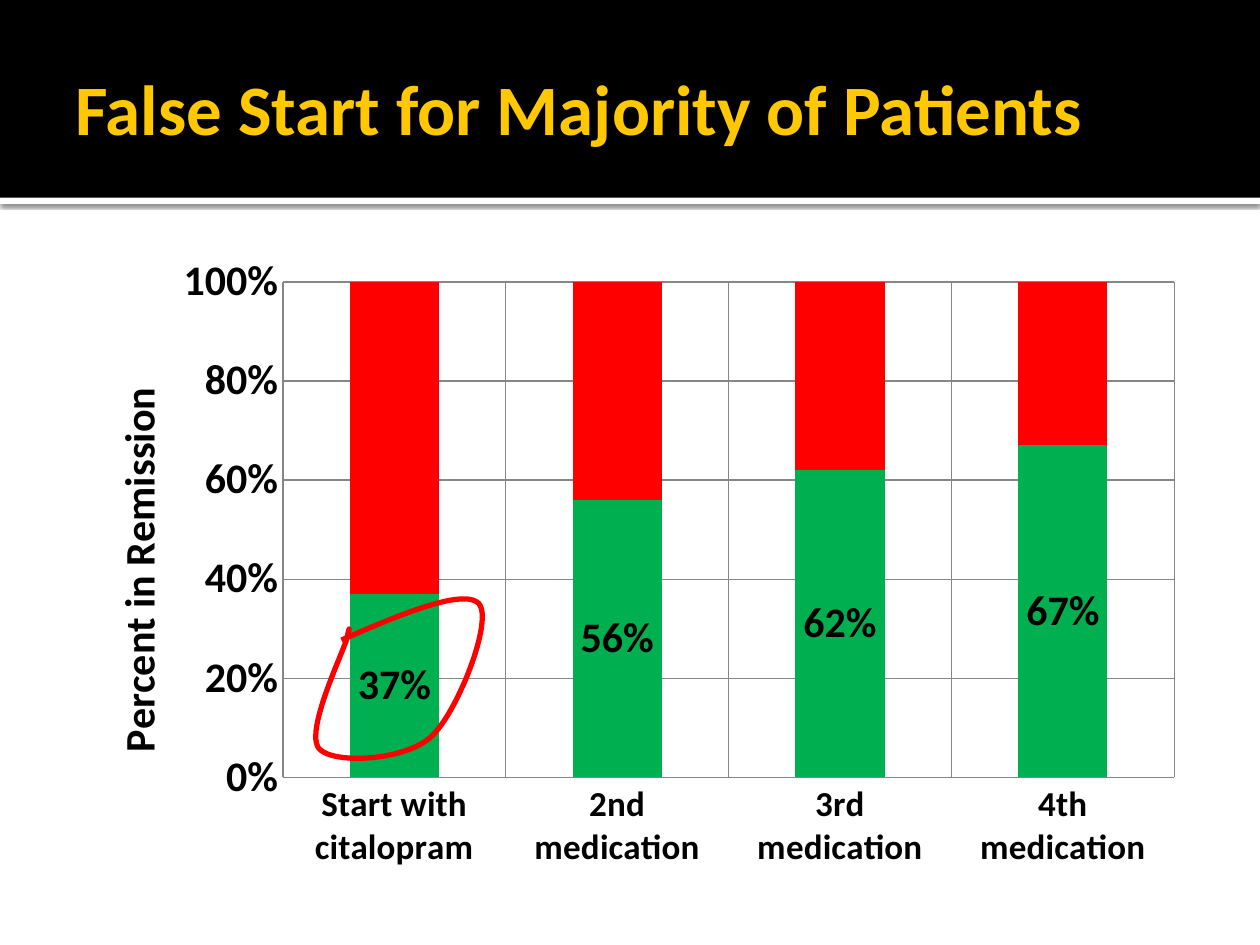
from lxml import etree
from pptx import Presentation
from pptx.chart.data import CategoryChartData
from pptx.dml.color import RGBColor
from pptx.enum.chart import XL_CHART_TYPE, XL_LABEL_POSITION, XL_TICK_MARK
from pptx.enum.shapes import MSO_SHAPE
from pptx.enum.text import MSO_ANCHOR
from pptx.oxml import parse_xml
from pptx.oxml.ns import nsdecls, qn
from pptx.util import Pt

STACKED_100 = XL_CHART_TYPE.COLUMN_STACKED_100
CENTER = XL_LABEL_POSITION.CENTER
NO_TICK = XL_TICK_MARK.NONE
RECTANGLE = MSO_SHAPE.RECTANGLE
MIDDLE = MSO_ANCHOR.MIDDLE


def color(hex_string):
    return RGBColor.from_string(hex_string)


def set_layout(element, index, **values):
    """Place a chart part by fractions of the chart's size."""
    for old_layout in element.findall(qn("c:layout")):
        element.remove(old_layout)
    layout = parse_xml(f"<c:layout {nsdecls('c')}><c:manualLayout/></c:layout>")
    for name, value in values.items():
        etree.SubElement(layout[0], qn(f"c:{name}")).set("val", str(value))
    element.insert(index, layout)


presentation = Presentation()
presentation.slide_width, presentation.slide_height = Pt(720), Pt(540)
slide = presentation.slides.add_slide(presentation.slide_layouts[6])
shapes = slide.shapes

# Header band with a white strip that casts a shadow
for top, height, fill in ((113, 3.6, "FFFFFF"), (0, 113, "000000")):
    band = shapes.add_shape(RECTANGLE, 0, Pt(top), Pt(720), Pt(height))
    band.shadow.inherit = False
    band.fill.solid()
    band.fill.fore_color.rgb = color(fill)
    band.line.fill.background()
    if fill == "FFFFFF":
        effects = band._element.spPr.find(qn("a:effectLst"))
        effects.append(parse_xml(
            f'<a:outerShdw {nsdecls("a")} blurRad="{Pt(2.5)}" dist="{Pt(0.8)}" '
            'dir="5400000" algn="tl" rotWithShape="0"><a:srgbClr val="000000">'
            '<a:alpha val="60000"/></a:srgbClr></a:outerShdw>'))

# Title
title = shapes.add_textbox(Pt(36), Pt(12.2), Pt(648), Pt(98.6))
frame = title.text_frame
frame.word_wrap = True
frame.vertical_anchor = MIDDLE
frame.margin_left = Pt(7.2)
frame.margin_right = frame.margin_top = frame.margin_bottom = Pt(3.6)
paragraph = frame.paragraphs[0]
paragraph.text = "False Start for Majority of Patients"
paragraph.font.name = "Calibri"
paragraph.font.size = Pt(40.5)
paragraph.font.bold = True
paragraph.font.color.rgb = color("FFC800")

# Remission chart
remission = [0.37, 0.56, 0.62, 0.67]
data = CategoryChartData(number_format="0%")
data.categories = ["Start with citalopram", "2nd medication",
                   "3rd medication", "4th medication"]
data.add_series("Series 1", remission)
data.add_series("Series 2", [round(1 - share, 2) for share in remission])
chart = shapes.add_chart(STACKED_100, Pt(36), Pt(139.7), Pt(648), Pt(364.3),
                         data).chart
chart.has_legend = False
chart.has_title = False
chart.font.name = "Calibri"
chart.font.size = Pt(24)
chart.font.bold = True
chart.font.color.rgb = color("000000")
set_layout(chart._chartSpace.chart.plotArea, 0, layoutTarget="inner",
           xMode="edge", yMode="edge", x=0.194, y=0.059, w=0.786, h=0.777)

# Bars and labels
plot = chart.plots[0]
plot.gap_width = 150
plot.overlap = 100
plot.vary_by_categories = False
for series, fill in zip(plot.series, ("00B050", "FF0000")):
    series.format.fill.solid()
    series.format.fill.fore_color.rgb = color(fill)
labels = plot.series[0].data_labels
labels.show_value = True
labels.number_format = "0%"
labels.number_format_is_linked = False
labels.position = CENTER

# Axes
for axis in (chart.category_axis, chart.value_axis):
    axis.major_tick_mark = axis.minor_tick_mark = NO_TICK
    axis.has_major_gridlines = True
    for line in (axis.format.line, axis.major_gridlines.format.line):
        line.color.rgb = color("868686")
        line.width = Pt(0.75)
chart.category_axis.tick_labels.font.size = Pt(20)
chart.category_axis.tick_labels.font.bold = True
value_axis = chart.value_axis
value_axis.minimum_scale, value_axis.maximum_scale = 0, 1
value_axis.major_unit = 0.2
value_axis.tick_labels.number_format = "0%"
value_axis.tick_labels.number_format_is_linked = False

# Value axis title
axis_frame = value_axis.axis_title.text_frame
axis_frame.text = "Percent in Remission"
axis_font = axis_frame.paragraphs[0].font
axis_font.name = "Calibri"
axis_font.size = Pt(24)
axis_font.bold = True
axis_font.color.rgb = color("000000")
axis_frame._txBody.find(qn("a:bodyPr")).set("rot", "-5400000")
set_layout(value_axis.axis_title._element, 1, xMode="edge", yMode="edge",
           x=0.035, y=0.213)

# Hand-drawn loop around the first label: Bézier curves, in points
start = (195.1, 365.8)
curves = [
    ((229.7, 350.6), (265, 336.2), (273.6, 344.9)),
    ((282.2, 354.2), (261.4, 407.5), (246.2, 421.2)),
    ((231.1, 434.9), (190.1, 437), (182.2, 427.7)),
    ((174.2, 417.6), (195.8, 373.7), (198.7, 363.6)),
    ((200.9, 353.5), (198, 365), (198, 365.8)),
]
STEPS = 24
points = [start]
for control_1, control_2, end in curves:
    begin = points[-1]
    for step in range(1, STEPS + 1):
        t = step / STEPS
        weights = ((1 - t) ** 3, 3 * t * (1 - t) ** 2, 3 * t * t * (1 - t), t ** 3)
        corners = (begin, control_1, control_2, end)
        points.append(tuple(sum(weight * corner[i] for weight, corner
                                in zip(weights, corners)) for i in (0, 1)))
builder = shapes.build_freeform(Pt(start[0]), Pt(start[1]))
builder.add_line_segments([(Pt(x), Pt(y)) for x, y in points[1:]], close=False)
loop = builder.convert_to_shape()
loop.shadow.inherit = False
loop.fill.background()
loop.line.color.rgb = color("FF0000")
loop.line.width = Pt(3)

presentation.save("out.pptx")
